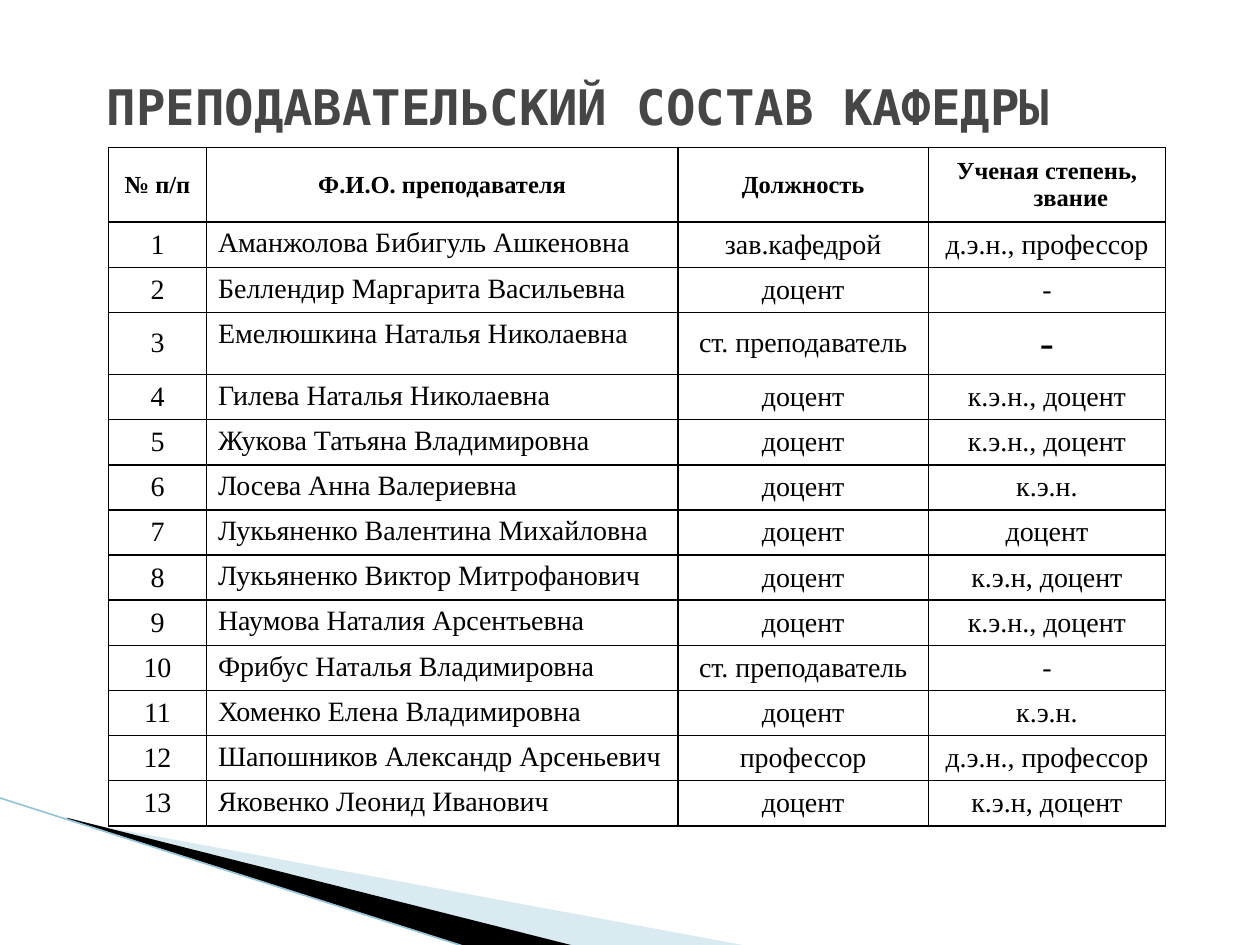
from dataclasses import dataclass

import lxml.etree
import pptx
import pptx.dml.color
import pptx.enum.shapes
import pptx.enum.text
import pptx.oxml.ns
import pptx.util

Pt = pptx.util.Pt
qn = pptx.oxml.ns.qn
MID = pptx.enum.text.MSO_ANCHOR.MIDDLE
TOP = pptx.enum.text.MSO_ANCHOR.TOP
LEFT = pptx.enum.text.PP_ALIGN.LEFT
MIDST = pptx.enum.text.PP_ALIGN.CENTER

HUES = {"title": "464646", "ink": "000000", "pale": "A0CBDC", "edge": "97C5D8"}
SERIF = "Times New Roman"
HANG = 27.36
COLS = (56.16, 269.28, 143.28, 135.36)
HEAD = ("№ п/п", "Ф.И.О. преподавателя", "Должность", "Ученая степень, звание")


@dataclass
class Wedge:
    spots: tuple
    hue: str
    alpha: int = 100


@dataclass
class Person:
    name: str
    post: str
    rank: str
    hang: bool = True
    size: int = 16


WEDGES = (
    Wedge(((39.6, 468.72), (428.4, 540.72), (328.32, 540.72), (39.6, 468)), "pale", 40),
    Wedge(((38.16, 467.28), (329.04, 540.72), (267.84, 541.44), (38.88, 468)), "ink"),
)
STAFF = (
    Person("Аманжолова Бибигуль Ашкеновна", "зав.кафедрой", "д.э.н., профессор", False),
    Person("Беллендир Маргарита Васильевна", "доцент", "-"),
    Person("Емелюшкина Наталья Николаевна", "ст. преподаватель", "-", False, 24),
    Person("Гилева Наталья Николаевна", "доцент", "к.э.н., доцент"),
    Person("Жукова Татьяна Владимировна", "доцент", "к.э.н., доцент"),
    Person("Лосева Анна Валериевна", "доцент", "к.э.н."),
    Person("Лукьяненко Валентина Михайловна", "доцент", "доцент"),
    Person("Лукьяненко Виктор Митрофанович", "доцент", "к.э.н, доцент"),
    Person("Наумова Наталия Арсентьевна", "доцент", "к.э.н., доцент"),
    Person("Фрибус Наталья Владимировна", "ст. преподаватель", "-", False),
    Person("Хоменко Елена Владимировна", "доцент", "к.э.н."),
    Person("Шапошников Александр Арсеньевич", "профессор", "д.э.н., профессор"),
    Person("Яковенко Леонид Иванович", "доцент", "к.э.н, доцент"),
)


def apply(item, form: dict) -> None:
    for key, value in form.items():
        setattr(item, key, value)


def tint(hue: str):
    return pptx.dml.color.RGBColor.from_string(HUES[hue])


def write(para, text: str, face: str, size: float, bold: bool, hue: str) -> None:
    run = para.add_run()
    run.text = text
    apply(run.font, {"name": face, "size": Pt(size), "bold": bold})
    run.font.color.rgb = tint(hue)


def draw_wedge(slide, wedge: Wedge) -> None:
    spots = [(Pt(x), Pt(y)) for x, y in wedge.spots]
    pen = slide.shapes.build_freeform(*spots[0])
    pen.add_line_segments(spots[1:], close=True)
    shape = pen.convert_to_shape()
    shape.shadow.inherit = False
    shape.fill.solid()
    shape.fill.fore_color.rgb = tint(wedge.hue)
    shape.line.fill.background()
    if wedge.alpha < 100:
        tone = shape._element.spPr.find(qn("a:solidFill"))[0]
        lxml.etree.SubElement(tone, qn("a:alpha"), val=str(wedge.alpha * 1000))


def draw_edge(slide) -> None:
    kind = pptx.enum.shapes.MSO_CONNECTOR.STRAIGHT
    ends = (Pt(v) for v in (-0.72, 455.76, 267.12, 541.44))
    edge = slide.shapes.add_connector(kind, *ends)
    edge.line.color.rgb = tint("edge")
    edge.line.width = Pt(0.95)
    lxml.etree.SubElement(edge._element.spPr, qn("a:effectLst"))


def draw_title(slide) -> None:
    box = slide.shapes.add_textbox(Pt(54), Pt(20.16), Pt(612), Pt(80.64))
    apply(box.text_frame, {"word_wrap": True, "vertical_anchor": MID})
    write(box.text_frame.paragraphs[0], "ПРЕПОДАВАТЕЛЬСКИЙ СОСТАВ КАФЕДРЫ",
          "DejaVu Sans Mono", 28, True, "title")


def frame(cell) -> None:
    props = cell._tc.get_or_add_tcPr()
    for side in ("lnL", "lnR", "lnT", "lnB"):
        line = lxml.etree.SubElement(props, qn(f"a:{side}"), w=str(Pt(1)))
        fill = lxml.etree.SubElement(line, qn("a:solidFill"))
        lxml.etree.SubElement(fill, qn("a:srgbClr"), val=HUES["ink"])
    cell.fill.background()


def fill_cell(cell, text: str, size: float, bold: bool, hang: bool, name: bool) -> None:
    frame(cell)
    apply(cell, {
        "margin_left": Pt(6.6), "margin_right": Pt(6.6),
        "margin_top": Pt(3.3), "margin_bottom": Pt(3.3),
        "vertical_anchor": TOP if name else MID,
    })
    para = cell.text_frame.paragraphs[0]
    para.alignment = LEFT if name else MIDST
    if hang:
        props = para._p.get_or_add_pPr()
        props.set("marL", str(Pt(HANG)))
        props.set("indent", str(Pt(-HANG)))
    write(para, text, SERIF, size, bold, "ink")


def draw_table(slide) -> None:
    tall = [42.75] + [34.2 if one.size > 16 else 25.05 for one in STAFF]
    table = slide.shapes.add_table(
        len(tall), len(COLS), Pt(61.92), Pt(84.24), Pt(sum(COLS)), Pt(sum(tall))).table
    apply(table, {"first_row": False, "horz_banding": False})
    for col, wide in zip(table.columns, COLS):
        col.width = Pt(wide)
    for row, high in zip(table.rows, tall):
        row.height = Pt(high)
    for col, text in enumerate(HEAD):
        fill_cell(table.cell(0, col), text, 14, True, True, False)
    for row, one in enumerate(STAFF, 1):
        for col, text in enumerate((str(row), one.name, one.post, one.rank)):
            size = one.size if col == 3 else 16
            fill_cell(table.cell(row, col), text, size, False,
                      one.hang or col == 0, col == 1)


def main() -> None:
    deck = pptx.Presentation()
    apply(deck, {"slide_width": Pt(720), "slide_height": Pt(540)})
    slide = deck.slides.add_slide(deck.slide_layouts[6])
    for wedge in WEDGES:
        draw_wedge(slide, wedge)
    draw_edge(slide)
    draw_title(slide)
    draw_table(slide)
    deck.save("out.pptx")


if __name__ == "__main__":
    main()
